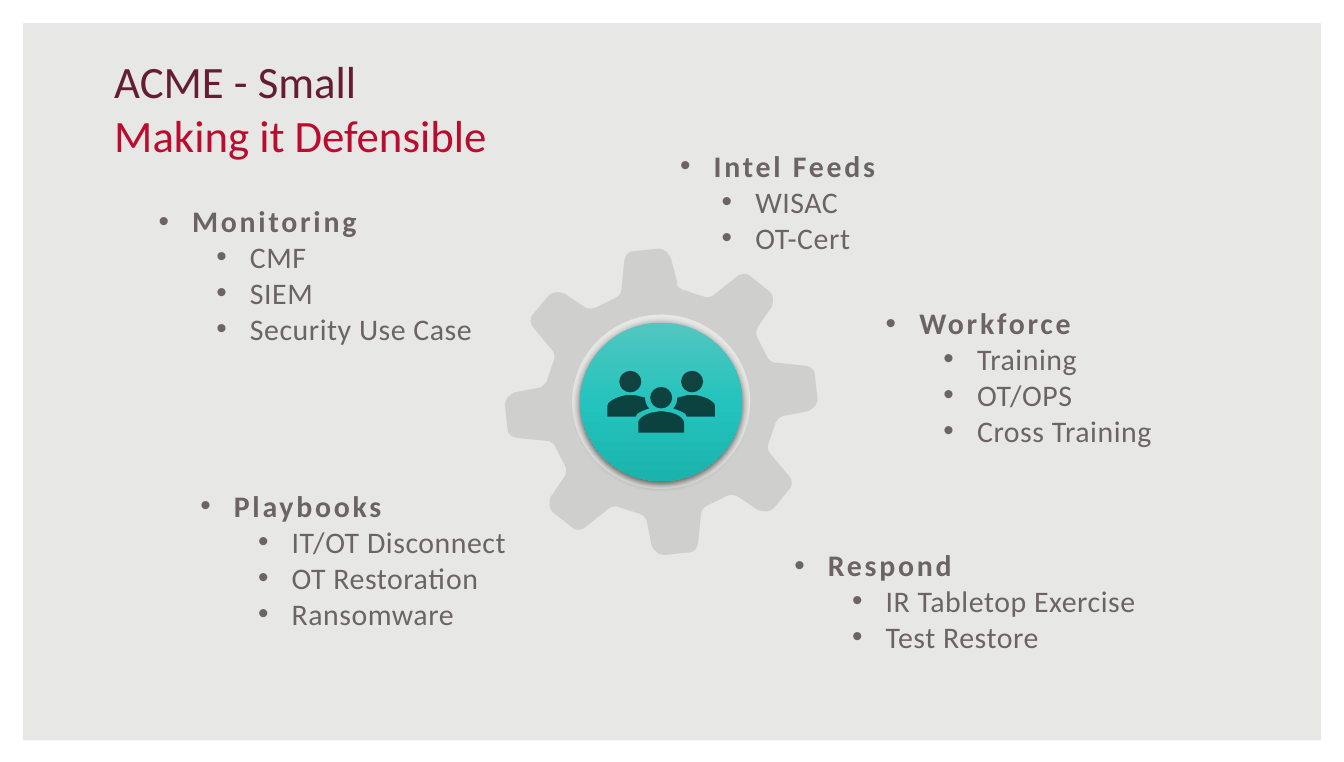
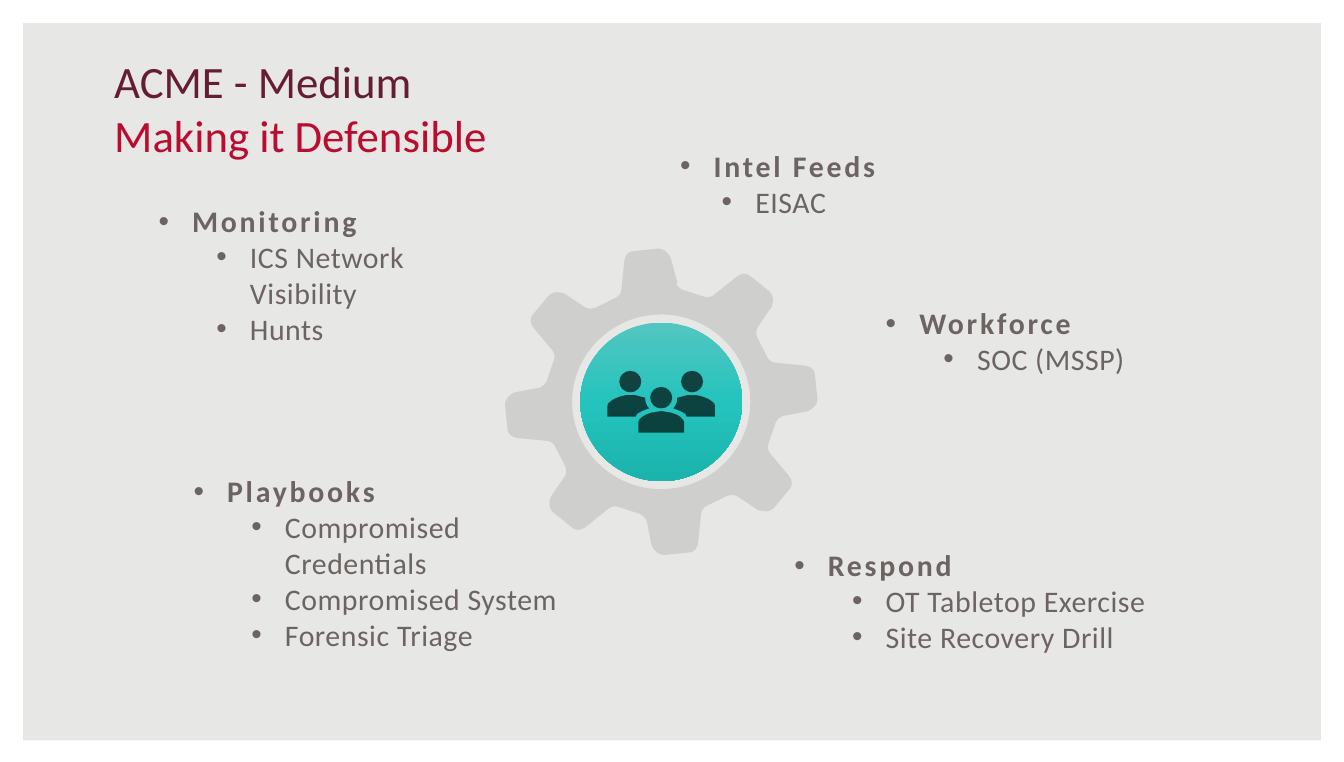
from copy import deepcopy
from dataclasses import dataclass
from math import cos, pi, sin

from lxml.etree import SubElement
from pptx import Presentation
from pptx.dml.color import RGBColor as Rgb
from pptx.enum.shapes import MSO_SHAPE as Shape
from pptx.enum.text import MSO_ANCHOR as Anchor, MSO_AUTO_SIZE as Fit, PP_ALIGN as Align
from pptx.oxml.ns import qn
from pptx.util import Inches, Pt


@dataclass(frozen=True)
class Theme:
    font: str = "Calibri"
    plum: str = "651D32"
    red: str = "BA0C2F"
    text: str = "6C6463"
    back: str = "E7E7E5"
    white: str = "FFFFFF"
    gear: str = "BFBFBF"
    black: str = "000000"
    teal: tuple = ("53C6C1", "25C3BD", "1AB4AD")
    title: int = 24
    body: int = 16


T = Theme()
WIDE, HIGH = 10, 5.67
MID_X, MID_Y = 4.92, 2.99       # hub of the gear
STRETCH = 1.02                  # the gear is a touch wider than high
BEND = 0.55                     # handle length of a quarter circle

TITLE_BOX = (0.75, 0.34, 8.5, 0.91)
BOXES = {
    "Monitoring": (0.83, 1.46, 3.05, 1.3),
    "Intel Feeds": (4.59, 1.05, 2.98, 1),
    "Playbooks": (1.14, 3.58, 2.93, 1.28),
    "Workforce": (6.24, 2.22, 2.78, 1.23),
    "Respond": (5.56, 4.02, 3.13, 1),
}
HEAD_INDENT = {"Intel Feeds": 0.62}

SLIDES = [
    {
        "name": "ACME - Small",
        "lists": {
            "Monitoring": ["CMF", "SIEM", "Security Use Case"],
            "Intel Feeds": ["WISAC", "OT-Cert"],
            "Playbooks": ["IT/OT Disconnect", "OT Restoration", "Ransomware"],
            "Workforce": ["Training", "OT/OPS", "Cross Training"],
            "Respond": ["IR Tabletop Exercise", "Test Restore"],
        },
        "moved": {},
        "shadow": True,
    },
    {
        "name": "ACME - Medium",
        "lists": {
            "Monitoring": ["ICS Network Visibility", "Hunts"],
            "Intel Feeds": ["EISAC"],
            "Playbooks": ["Compromised Credentials", "Compromised System",
                          "Forensic Triage"],
            "Workforce": ["SOC (MSSP)"],
            "Respond": ["OT Tabletop Exercise", "Site Recovery Drill"],
        },
        "moved": {"Playbooks": (1.09, 3.47, 3.52, 1.63)},
        "shadow": False,
    },
]

# Routes around the hub: a start, then lines (1 point) or curves (3 points)
TOOTH = [
    [(0.12, -0.88)],
    [(0.07, -1.07)],
    [(0.05, -1.11), (0.02, -1.14), (-0.02, -1.14)],
    [(-0.21, -1.12)],
    [(-0.24, -1.12), (-0.27, -1.08), (-0.27, -1.04)],
    [(-0.29, -0.84)],
    [(-0.29, -0.81), (-0.31, -0.78), (-0.34, -0.77)],
    [(-0.38, -0.75), (-0.42, -0.73), (-0.46, -0.71)],
    [(-0.49, -0.69), (-0.52, -0.69), (-0.55, -0.7)],
]
FRONT = [
    [(-0.17, 0.23)],
    [(-0.17, 0.15)],
    [(-0.17, 0.14), (-0.16, 0.13), (-0.15, 0.12)],
    [(-0.13, 0.1), (-0.1, 0.09), (-0.07, 0.08)],
    [(-0.05, 0.08), (-0.02, 0.07), (0, 0.07)],
    [(0.02, 0.07), (0.05, 0.08), (0.07, 0.08)],
    [(0.1, 0.09), (0.13, 0.1), (0.15, 0.12)],
    [(0.16, 0.13), (0.17, 0.14), (0.17, 0.15)],
    [(0.17, 0.23)],
]
SIDE = [
    [(-0.23, -0.05)],
    [(-0.2, -0.05), (-0.18, -0.05), (-0.16, -0.04)],
    [(-0.15, -0.04), (-0.13, -0.03), (-0.12, -0.03)],
    [(-0.12, 0), (-0.11, 0.03), (-0.09, 0.05)],
    [(-0.12, 0.06), (-0.15, 0.07), (-0.18, 0.09)],
    [(-0.18, 0.1), (-0.19, 0.1), (-0.19, 0.11)],
    [(-0.4, 0.11)],
    [(-0.4, 0.03)],
    [(-0.4, 0.02), (-0.39, 0), (-0.38, 0)],
    [(-0.36, -0.02), (-0.33, -0.03), (-0.3, -0.04)],
    [(-0.27, -0.05), (-0.25, -0.05), (-0.23, -0.05)],
]
HEADS = [(0, -0.03), (0.23, -0.15), (-0.23, -0.15)]


# Small helpers
def put(item, **form):
    for name, value in form.items():
        setattr(item, name, value)


def place(shape, box):
    put(shape, **dict(zip(("left", "top", "width", "height"), map(Inches, box))))


def add(parent, tag, **attrs):
    return SubElement(parent, qn(tag), {k: str(v) for k, v in attrs.items()})


def paint(shape, color, alpha=None):
    shape.shadow.inherit = False
    shape.line.fill.background()
    shape.fill.solid()
    shape.fill.fore_color.rgb = Rgb.from_string(color)
    if alpha:
        tint = shape.element.spPr.find(qn("a:solidFill"))[0]
        add(tint, "a:alpha", val=alpha * 1000)


# Routes
def remap(route, rule):
    return [[rule(x, y) for x, y in part] for part in route]


def turn(route, angle):
    c, s = cos(angle), sin(angle)
    return remap(route, lambda x, y: (x * c + y * s, y * c - x * s))


def widen(route):
    return remap(route, lambda x, y: (STRETCH * x, y))


def ring(x, y, size):
    arc = [[(1, BEND), (BEND, 1), (0, 1)]]
    route = [[(1, 0)]]
    for k in range(4):
        route += turn(arc, -k * pi / 2)
    return remap(route, lambda u, v: (x + STRETCH * size * u, y + size * v))


def trace(slide, routes):
    """Lay out every point as a corner, then join each three into a curve."""
    pen = None
    for route in routes:
        start, *rest = [(Inches(MID_X + x), Inches(MID_Y + y))
                        for part in route for x, y in part]
        if pen:
            pen.move_to(*start)
        else:
            pen = slide.shapes.build_freeform(*start, scale=1.0)
        pen.add_line_segments(rest, close=True)
    shape = pen.convert_to_shape()
    lines = iter(list(shape.element.iter(qn("a:lnTo"))))
    for part in (p for route in routes for p in route[1:]):
        first, *more = [next(lines) for point in part]
        if more:
            first.tag = qn("a:cubicBezTo")
            for line in more:
                first.append(line[0])
                line.getparent().remove(line)
    return shape


# Center art
def add_gear(slide):
    rim = TOOTH[:1]
    for k in range(8):
        rim = rim + turn(TOOTH[1:], k * pi / 4)
    paint(trace(slide, [widen(rim), ring(0, 0, 0.65)]), T.gear, 60)


def add_disc(slide, shadow):
    disc = trace(slide, [ring(0, 0, 0.59)])
    disc.shadow.inherit = False
    disc.line.fill.background()
    disc.fill.gradient()
    disc.fill.gradient_angle = 270
    props = disc.element.spPr
    stops = props.find(qn("a:gradFill")).find(qn("a:gsLst"))
    for stop in list(stops):
        stops.remove(stop)
    for i, color in enumerate(T.teal):
        add(add(stops, "a:gs", pos=i * 50000), "a:srgbClr", val=color)
    if shadow:
        cast = add(props.find(qn("a:effectLst")), "a:outerShdw", blurRad=Pt(4.5),
                   dist=Pt(1.5), dir=5400000, algn="ctr", rotWithShape=0)
        add(add(cast, "a:srgbClr", val=T.black), "a:alpha", val=63000)


def add_team(slide):
    other = remap(SIDE, lambda x, y: (-x, y))
    heads = [ring(x, y, 0.08) for x, y in HEADS]
    paint(trace(slide, [FRONT, other, SIDE, *heads]), T.black, 66)


# Text
def add_run(para, text, color, size, bold=False, gap=None):
    run = para.add_run()
    run.text = text
    put(run.font, name=T.font, size=Pt(size), bold=bold)
    run.font.color.rgb = Rgb.from_string(color)
    if gap:
        para._p.r_lst[-1].get_or_add_rPr().set("spc", str(int(gap * 100)))


def fill_title(shape, name):
    frame = shape.text_frame
    put(frame, word_wrap=True, auto_size=Fit.NONE, vertical_anchor=Anchor.BOTTOM)
    para = frame.paragraphs[0]
    para.alignment = Align.LEFT
    add_run(para, name, T.plum, T.title)
    para.add_line_break()
    add_run(para, "Making it Defensible", T.red, T.title)


def add_bullet(para, indent):
    props = para._p.get_or_add_pPr()
    props.set("marL", str(Inches(indent)))
    props.set("indent", str(Inches(-0.25)))
    add(add(props, "a:buClr"), "a:srgbClr", val=T.text)
    add(props, "a:buFont", typeface="Arial")
    add(props, "a:buChar", char="•")


def fill_list(shape, head, items):
    frame = shape.text_frame
    put(frame, word_wrap=True, auto_size=Fit.NONE, vertical_anchor=Anchor.TOP)
    for i, text in enumerate([head, *items]):
        para = frame.add_paragraph() if i else frame.paragraphs[0]
        add_bullet(para, 0.93 if i else HEAD_INDENT.get(head, 0.5))
        put(para, level=min(i, 1), space_before=Pt(0), alignment=Align.LEFT)
        add_run(para, text, T.text, T.body, bold=not i, gap=0.3 if i else 1.5)


# Shared layout: ground, title and one body holder per list
def set_layout(deck):
    ground = deck.slide_master.background.fill
    ground.solid()
    ground.fore_color.rgb = Rgb.from_string(T.back)
    layout = deck.slide_layouts[1]
    title, body = layout.placeholders[0], layout.placeholders[1]
    place(title, TITLE_BOX)
    last = body.element
    for idx in range(21, 20 + len(BOXES)):
        twin = deepcopy(body.element)
        twin.xpath(".//p:ph")[0].set("idx", str(idx))
        twin.xpath(".//p:cNvPr")[0].set("id", str(idx))
        last.addnext(twin)
        last = twin
    holders = [h for h in layout.placeholders
               if h.placeholder_format.idx in (1, 21, 22, 23, 24)]
    for holder, box in zip(holders, BOXES.values()):
        place(holder, box)
    return layout


def add_frame(deck, slide):
    frame = slide.shapes.add_shape(Shape.FRAME, 0, 0, Inches(WIDE), Inches(5.68))
    frame.adjustments[0] = 0.03
    paint(frame, T.white)
    deck.slide_master.shapes.element.insert(2, frame.element)


def add_page(deck, layout, page):
    slide = deck.slides.add_slide(layout)
    fill_title(slide.shapes.title, page["name"])
    bodies = [h for h in slide.placeholders if h.placeholder_format.idx]
    for body, (head, items) in zip(bodies, page["lists"].items()):
        if head in page["moved"]:
            place(body, page["moved"][head])
        fill_list(body, head, items)
    add_gear(slide)
    add_disc(slide, page["shadow"])
    add_team(slide)
    return slide


def main():
    deck = Presentation()
    put(deck, slide_width=Inches(WIDE), slide_height=Inches(HIGH))
    layout = set_layout(deck)
    pages = [add_page(deck, layout, page) for page in SLIDES]
    add_frame(deck, pages[0])
    deck.save("out.pptx")


if __name__ == "__main__":
    main()
